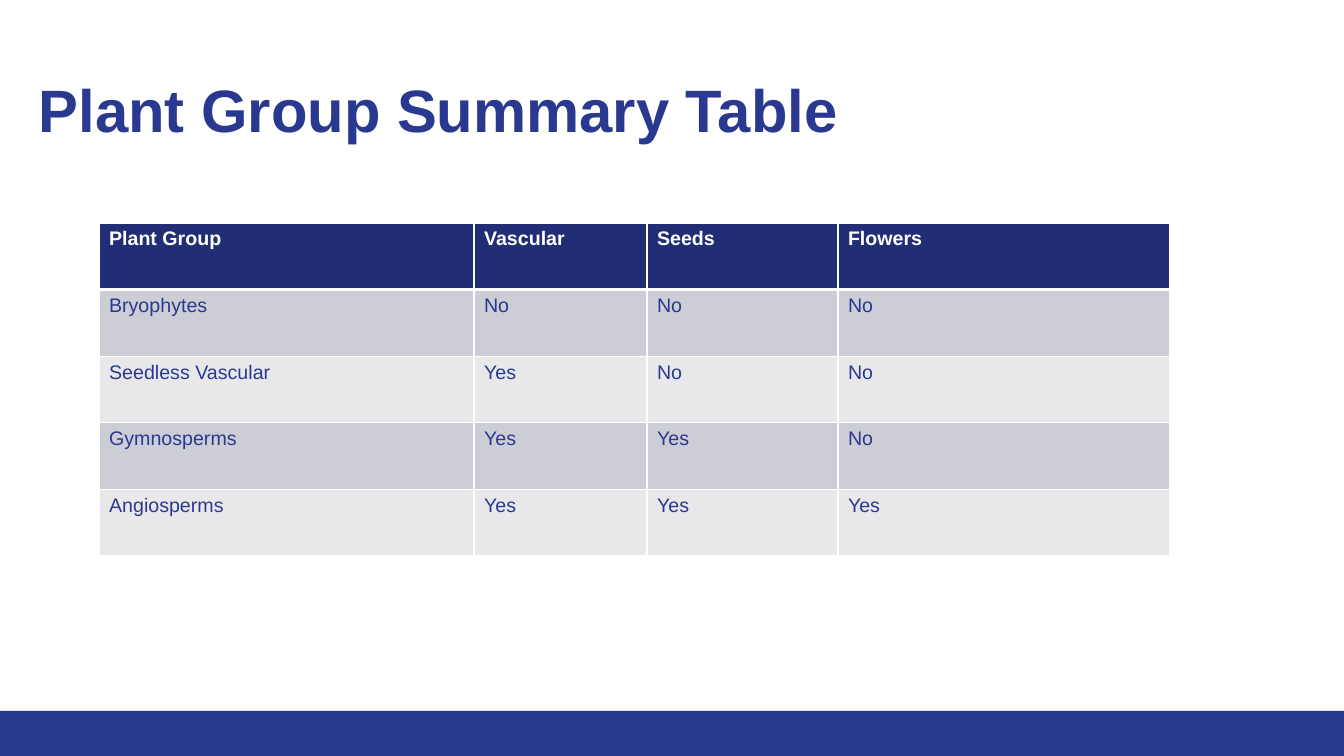
from dataclasses import dataclass

from lxml import etree
from pptx import Presentation
from pptx.dml.color import RGBColor
from pptx.enum.shapes import MSO_SHAPE
from pptx.enum.text import MSO_ANCHOR
from pptx.oxml.ns import qn
from pptx.util import Pt

RECTANGLE = MSO_SHAPE.RECTANGLE
MIDDLE = MSO_ANCHOR.MIDDLE
PX = 914400 / 100.8
SLIDE_WIDTH, SLIDE_HEIGHT = 1344, 756


@dataclass(frozen=True)
class Theme:
    font: str = "Arial"
    blue: str = "2A3990"
    header_fill: str = "212D74"
    band_fills: tuple = ("CDCDD6", "E8E8EB")
    white: str = "FFFFFF"
    title_size: float = 42.7
    table_size: float = 14
    border: float = 1
    header_border: float = 3


THEME = Theme()

COLUMN_WIDTHS = (375, 173, 191, 332)
PLANT_GROUPS = (
    ("Plant Group", "Vascular", "Seeds", "Flowers"),
    ("Bryophytes", "No", "No", "No"),
    ("Seedless Vascular", "Yes", "No", "No"),
    ("Gymnosperms", "Yes", "Yes", "No"),
    ("Angiosperms", "Yes", "Yes", "Yes"),
)


def px(length):
    return round(length * PX)


def emu_box(box):
    return [px(length) for length in box]


def color(value):
    return RGBColor.from_string(value)


def style_text(paragraph, size, text_color, bold):
    for run in paragraph.runs:
        run.font.name = THEME.font
        run.font.size = Pt(size)
        run.font.bold = bold
        run.font.color.rgb = color(text_color)


def add_footer_band(slide, box):
    band = slide.shapes.add_shape(RECTANGLE, *emu_box(box))
    band.shadow.inherit = False
    band.fill.solid()
    band.fill.fore_color.rgb = color(THEME.blue)
    band.line.fill.background()


def add_title(slide, box, text):
    text_frame = slide.shapes.add_textbox(*emu_box(box)).text_frame
    text_frame.word_wrap = True
    text_frame.vertical_anchor = MIDDLE
    text_frame.text = text
    paragraph = text_frame.paragraphs[0]
    paragraph.line_spacing = 0.9
    style_text(paragraph, THEME.title_size, THEME.blue, True)


def set_borders(cell, top, bottom):
    """Draw white cell borders; must run before the cell fill is set."""
    properties = cell._tc.get_or_add_tcPr()
    widths = {"lnL": THEME.border, "lnR": THEME.border, "lnT": top, "lnB": bottom}
    for side, width in widths.items():
        line = etree.SubElement(properties, qn(f"a:{side}"), w=str(Pt(width)))
        fill = etree.SubElement(line, qn("a:solidFill"))
        etree.SubElement(fill, qn("a:srgbClr"), val=THEME.white)


def add_plant_table(slide, box):
    table = slide.shapes.add_table(
        len(PLANT_GROUPS), len(COLUMN_WIDTHS), *emu_box(box)).table
    for column, width in zip(table.columns, COLUMN_WIDTHS):
        column.width = px(width)
    for row_index, values in enumerate(PLANT_GROUPS):
        table.rows[row_index].height = px(box[3] / len(PLANT_GROUPS))
        is_header = row_index == 0
        fill = THEME.header_fill if is_header else THEME.band_fills[(row_index - 1) % 2]
        text_color = THEME.white if is_header else THEME.blue
        top = THEME.header_border if row_index == 1 else THEME.border
        bottom = THEME.header_border if is_header else THEME.border
        for cell, value in zip(table.rows[row_index].cells, values):
            set_borders(cell, top, bottom)
            cell.fill.solid()
            cell.fill.fore_color.rgb = color(fill)
            cell.text_frame.text = value
            style_text(cell.text_frame.paragraphs[0], THEME.table_size,
                       text_color, is_header)


def build_summary_slide(presentation):
    slide = presentation.slides.add_slide(presentation.slide_layouts[6])
    slide.background.fill.solid()
    slide.background.fill.fore_color.rgb = color(THEME.white)
    add_footer_band(slide, (0, 711, SLIDE_WIDTH, SLIDE_HEIGHT - 711))
    add_title(slide, (29, 40, 1279, 146), "Plant Group Summary Table")
    add_plant_table(slide, (99, 223, sum(COLUMN_WIDTHS), 333))


def main():
    presentation = Presentation()
    presentation.slide_width = px(SLIDE_WIDTH)
    presentation.slide_height = px(SLIDE_HEIGHT)
    build_summary_slide(presentation)
    presentation.save("out.pptx")


if __name__ == "__main__":
    main()
